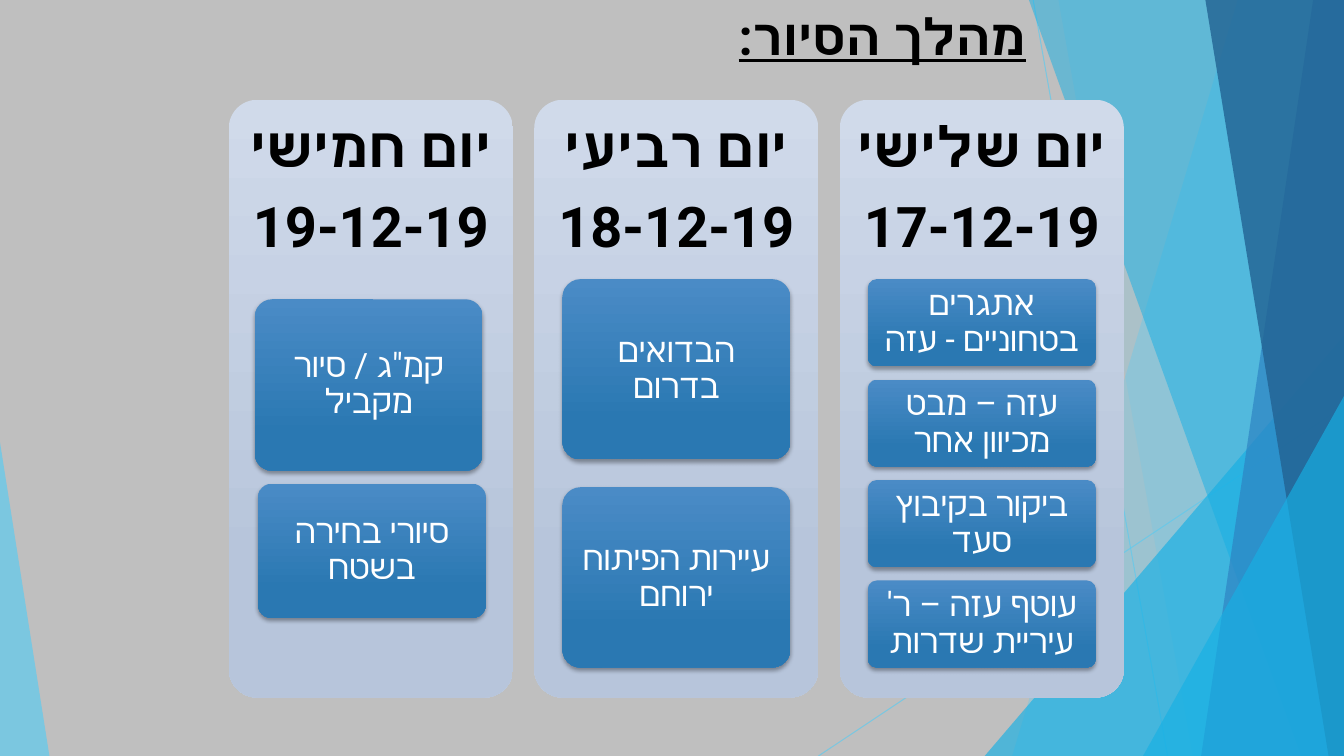
from lxml import etree
from pptx import Presentation
from pptx.dml.color import RGBColor
from pptx.enum.shapes import MSO_CONNECTOR, MSO_SHAPE
from pptx.enum.text import MSO_ANCHOR, PP_ALIGN
from pptx.oxml.ns import qn
from pptx.util import Pt

ROUND, TRIANGLE = MSO_SHAPE.ROUNDED_RECTANGLE, MSO_SHAPE.ISOSCELES_TRIANGLE
STRAIGHT = MSO_CONNECTOR.STRAIGHT
TOP, MIDDLE = MSO_ANCHOR.TOP, MSO_ANCHOR.MIDDLE
CENTER, RIGHT = PP_ALIGN.CENTER, PP_ALIGN.RIGHT

# Content, columns from left to right
TITLE = "מהלך הסיור:"
DAYS = [
    ("יום חמישי", "19-12-19", ['קמ"ג / סיור מקביל', "סיורי בחירה בשטח"]),
    ("יום רביעי", "18-12-19", ["הבדואים בדרום", "עיירות הפיתוח ירוחם"]),
    ("יום שלישי", "17-12-19", ["אתגרים בטחוניים - עזה", "עזה – מבט מכיוון אחר",
                               "ביקור בקיבוץ סעד", "עוטף עזה – ר' עיריית שדרות"]),
]
# Cards moved by hand: (day, card) -> inset from the panel, top, height
MOVED = {(0, 0): (18.7, 213.8, 122.4), (0, 1): (20.9, 345.6, 95.8)}

THEME = {
    "font": "Roboto", "title": 36, "day": 40, "card": 24,
    "bg": "BFBFBF", "dark": "000000", "light": "FFFFFF",
    "panel": ("D0DAEA", "B7C5DB"), "card_fill": ("4A8BC6", "2A78B2"),
    "pale": "5FCBEF", "cyan": "17B0E4", "blue": "2E83C3", "navy": "226292",
}

# Layout
W, H = 960, 540
PANEL_X, PANEL_Y, PANEL_W, PANEL_H, PITCH = 163.4, 71.3, 203, 427, 218.2
HEAD_H = 128.2
CARD_INSET, CARD_W, STACK_Y, STACK_H, GAP = 20.2, 162.7, 199.4, 277.4, 0.154

# Backdrop: lines, bands (top x, bottom x) and corner triangles (left, top, width, apex)
LINES = [(738, 0, 834, H), (W, 290, 584.6, H)]
BACKDROP = [
    ("band", (884, 723), "pale", 36),
    ("band", (756, 852), "pale", 20),
    ("corner", (703.4, 239.8, 256.6, 1), "cyan", 66),
    ("band", (735, 929.5), "cyan", 50),
    ("band", (938, 858), "blue", 70),
    ("band", (861, 949), "navy", 80),
    ("corner", (816.5, 283, 143.5, 1), "cyan", 66),
    ("corner", (0, 316, 35.3, 0), "pale", 70),
]

prs = Presentation()
prs.slide_width, prs.slide_height = Pt(W), Pt(H)
s = prs.slides.add_slide(prs.slide_layouts[6])


def rgb(name):
    return RGBColor.from_string(THEME[name])


def set_alpha(fill_parent, percent):
    color = next(fill_parent.iter(qn("a:srgbClr")))
    etree.SubElement(color, qn("a:alpha"), val=str(percent * 1000))


def add_text(sp, lines, size, color, align=CENTER, anchor=MIDDLE, inset=(7.2, 3.6),
             bold=False, underline=False, rtl=False, spaced=True):
    tf = sp.text_frame
    tf.word_wrap, tf.vertical_anchor = True, anchor
    tf.margin_left = tf.margin_right = Pt(inset[0])
    tf.margin_top = tf.margin_bottom = Pt(inset[1])
    for i, line in enumerate(lines):
        p = tf.add_paragraph() if i else tf.paragraphs[0]
        p.alignment = align
        pPr = p._p.get_or_add_pPr()
        if rtl:
            pPr.set("rtl", "1")
        if spaced:
            p.line_spacing = 0.9
            after = etree.SubElement(pPr, qn("a:spcAft"))
            etree.SubElement(after, qn("a:spcPct"), val="35000")
        r = p.add_run()
        r.text = line
        r.font.name, r.font.size = THEME["font"], Pt(THEME[size])
        r.font.bold, r.font.underline = bold, underline
        r.font.color.rgb = rgb(color)
        etree.SubElement(r._r.get_or_add_rPr(), qn("a:cs"), typeface=THEME["font"])


def add_box(x, y, w, h, colors):
    sp = s.shapes.add_shape(ROUND, Pt(x), Pt(y), Pt(w), Pt(h))
    sp.adjustments[0] = 0.1
    sp.shadow.inherit = False
    sp.line.fill.background()
    sp.fill.gradient()
    sp.fill.gradient_angle = 270
    for stop, pos, color in zip(sp.fill.gradient_stops, (0, 0.78), THEME[colors]):
        stop.position = pos
        stop.color.rgb = RGBColor.from_string(color)
    return sp


def add_shadow(sp):
    effects = sp._element.spPr.find(qn("a:effectLst"))
    shadow = etree.SubElement(effects, qn("a:outerShdw"), blurRad=str(Pt(3)),
                              dist=str(Pt(2)), dir="5400000", rotWithShape="0")
    etree.SubElement(shadow, qn("a:srgbClr"), val=THEME["dark"])
    set_alpha(shadow, 35)


# Backdrop
s.background.fill.solid()
s.background.fill.fore_color.rgb = rgb("bg")
for x1, y1, x2, y2 in LINES:
    line = s.shapes.add_connector(STRAIGHT, Pt(x1), Pt(y1), Pt(x2), Pt(y2))
    line.line.color.rgb, line.line.width = rgb("pale"), Pt(0.75)
    set_alpha(line._element.spPr, 70)
    etree.SubElement(line._element.spPr, qn("a:effectLst"))
for kind, geometry, color, opacity in BACKDROP:
    if kind == "band":
        top_x, bottom_x = geometry
        outline = s.shapes.build_freeform(Pt(top_x), 0)
        outline.add_line_segments([(Pt(W), 0), (Pt(W), Pt(H)), (Pt(bottom_x), Pt(H))])
        sp = outline.convert_to_shape()
    else:
        x, y, w, apex = geometry
        sp = s.shapes.add_shape(TRIANGLE, Pt(x), Pt(y), Pt(w), Pt(H - y))
        sp.adjustments[0] = apex
    sp.shadow.inherit = False
    sp.line.fill.background()
    sp.fill.solid()
    sp.fill.fore_color.rgb = rgb(color)
    set_alpha(sp._element.spPr, opacity)

# Day panels with their cards
for d, (day, date, stops) in enumerate(DAYS):
    x = PANEL_X + d * PITCH
    add_box(x, PANEL_Y, PANEL_W, PANEL_H, "panel")
    head = s.shapes.add_textbox(Pt(x), Pt(PANEL_Y), Pt(PANEL_W), Pt(HEAD_H))
    add_text(head, [day, date], "day", "dark", inset=(12, 12), bold=True)
    even_h = STACK_H / (len(stops) + GAP * (len(stops) - 1))
    for c, stop in enumerate(stops):
        even = (CARD_INSET, STACK_Y + c * even_h * (1 + GAP), even_h)
        inset, y, h = MOVED.get((d, c), even)
        card = add_box(x + inset, y, CARD_W, h, "card_fill")
        add_shadow(card)
        add_text(card, [stop], "card", "light")

# Title
title = s.shapes.add_textbox(Pt(366.5), Pt(0), Pt(373.7), Pt(104.4))
add_text(title, [TITLE], "title", "dark", align=RIGHT, anchor=TOP,
         bold=True, underline=True, rtl=True, spaced=False)

prs.save("out.pptx")
